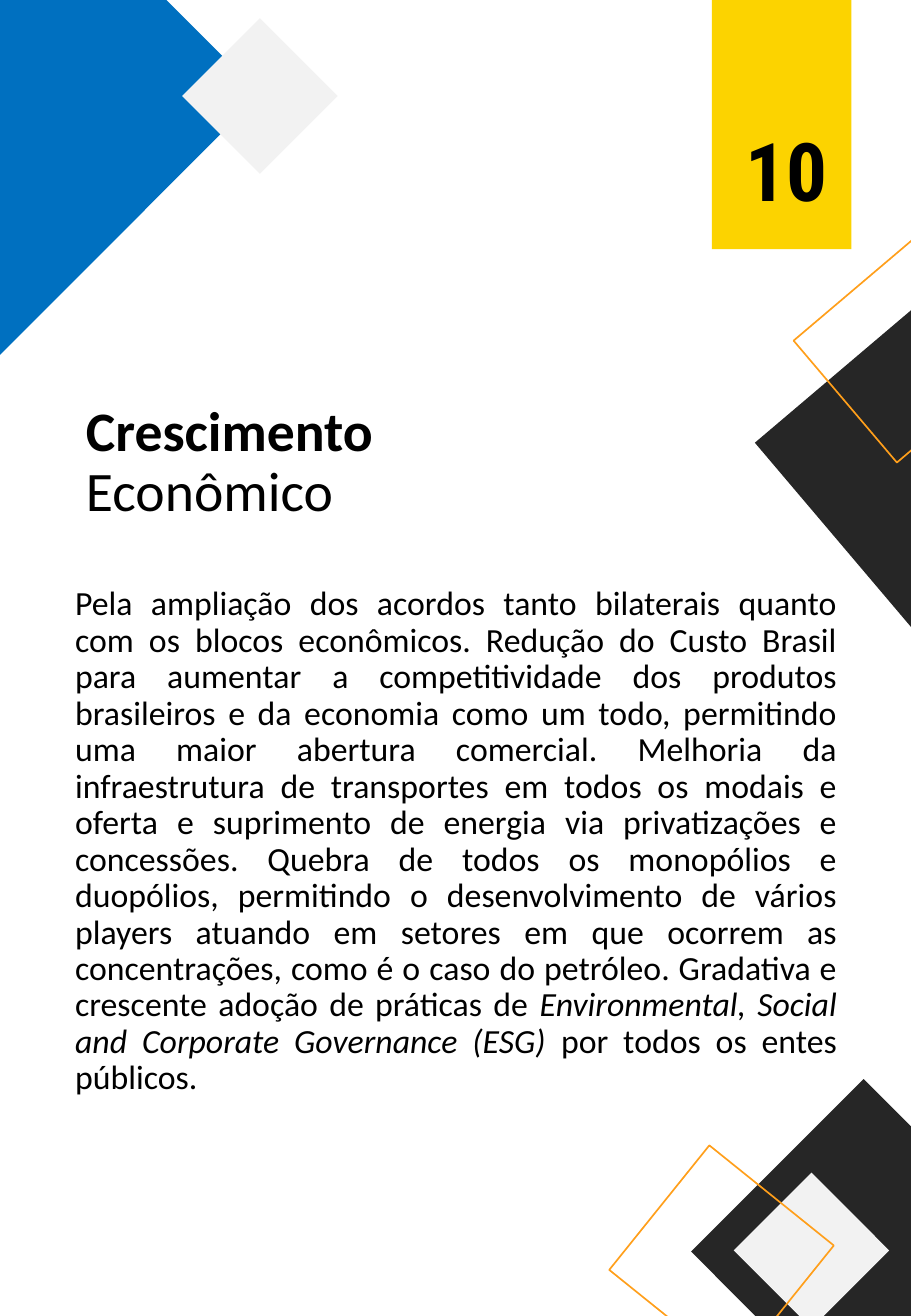
from pptx import Presentation
from pptx.dml.color import RGBColor
from pptx.enum.shapes import MSO_SHAPE
from pptx.enum.text import MSO_ANCHOR, MSO_AUTO_SIZE, PP_ALIGN
from pptx.util import Inches, Pt

BLUE = RGBColor(0x00, 0x70, 0xC0)
DARK = RGBColor(0x26, 0x26, 0x26)
LIGHT = RGBColor(0xF2, 0xF2, 0xF2)
GOLD = RGBColor(0xFC, 0xD3, 0x00)
AMBER = RGBColor(0xFF, 0x9F, 0x1B)
BLACK = RGBColor(0, 0, 0)

# Square grid: 75 columns across, 108.3 rows down
WIDE, HIGH = Inches(7.5), Inches(10.83)
UNIT = WIDE / 75

# Diamond sizes in grid units
HUGE, LARGE, FRAME, SMALL = 42.9, 28.4, 18.6, 12.8

BODY = [
    ("Pela ampliação dos acordos tanto bilaterais quanto com os blocos "
     "econômicos. Redução do Custo Brasil para aumentar a competitividade "
     "dos produtos brasileiros e da economia como um todo, permitindo uma "
     "maior abertura comercial. Melhoria da infraestrutura de transportes "
     "em todos os modais e oferta e suprimento de energia via privatizações "
     "e concessões. Quebra de todos os monopólios e duopólios, permitindo o "
     "desenvolvimento de vários players atuando em setores em que ocorrem as "
     "concentrações, como é o caso do petróleo. Gradativa e crescente adoção "
     "de práticas de ", False),
    ("Environmental, Social and Corporate Governance (ESG)", True),
    (" por todos os entes públicos.", False),
]


def grid(*cells):
    return [round(cell * UNIT) for cell in cells]


def add_block(slide, kind, box, fill=None, line=None, turn=0):
    shape = slide.shapes.add_shape(kind, *grid(*box))
    shape.shadow.inherit = False
    shape.rotation = turn
    if fill is None:
        shape.fill.background()
    else:
        shape.fill.solid()
        shape.fill.fore_color.rgb = fill
    if line is None:
        shape.line.fill.background()
    else:
        shape.line.color.rgb = line
        shape.line.width = Pt(1)


def add_gem(slide, mid, row, size, turn, fill=None, line=None):
    """Diamond placed by its centre."""
    box = (mid - size / 2, row - size / 2, size, size)
    add_block(slide, MSO_SHAPE.DIAMOND, box, fill, line, turn)


def add_box(slide, box, anchor=MSO_ANCHOR.TOP):
    frame = slide.shapes.add_textbox(*grid(*box)).text_frame
    frame.word_wrap = True
    frame.vertical_anchor = anchor
    return frame


def add_run(para, text, size, bold=False, italic=False, face="Calibri"):
    run = para.add_run()
    run.text = text
    font = run.font
    font.name, font.size = face, Pt(size)
    font.bold, font.italic = bold, italic
    font.color.rgb = BLACK


def main():
    deck = Presentation()
    deck.slide_width, deck.slide_height = WIDE, HIGH
    slide = deck.slides.add_slide(deck.slide_layouts[6])

    # Upper corners
    add_gem(slide, 0, 7.75, HUGE, 90, fill=BLUE)
    add_gem(slide, 76.3, 37.6, LARGE, 94.7, fill=DARK)
    add_gem(slide, 74.6, 28.8, FRAME, 94.7, line=AMBER)

    # Page number tab
    add_block(slide, MSO_SHAPE.RECTANGLE, (58.6, -1.7, 11.5, 22.2), GOLD)
    number = add_box(slide, (60.4, 9.4, 10.4, 9.1))
    number.auto_size = MSO_AUTO_SIZE.SHAPE_TO_FIT_TEXT
    add_run(number.paragraphs[0], "10", 48, bold=True, face="Roboto Condensed")

    # Body text
    para = add_box(slide, (5.2, 47.8, 64.7, 36.5)).paragraphs[0]
    para.alignment = PP_ALIGN.JUSTIFY
    para.line_spacing = 0.9
    para.space_before = Pt(7.5)
    for text, italic in BODY:
        add_run(para, text, 20, italic=italic)

    add_gem(slide, 21.4, 7.9, SMALL, 90, fill=LIGHT)

    # Title
    title = add_box(slide, (6.1, 27.7, 64.7, 20.9), MSO_ANCHOR.MIDDLE)
    first, second = title.paragraphs[0], title.add_paragraph()
    for para, text, bold in ((first, "Crescimento", True),
                             (second, "Econômico", False)):
        para.line_spacing = 0.9
        add_run(para, text, 33, bold=bold)

    # Lower corner
    add_gem(slide, 71.1, 103, LARGE, 270, fill=DARK)
    add_gem(slide, 66.8, 102.9, SMALL, 180, fill=LIGHT)
    add_gem(slide, 59.4, 103.5, FRAME, 173.8, line=AMBER)

    deck.save("out.pptx")


if __name__ == "__main__":
    main()
